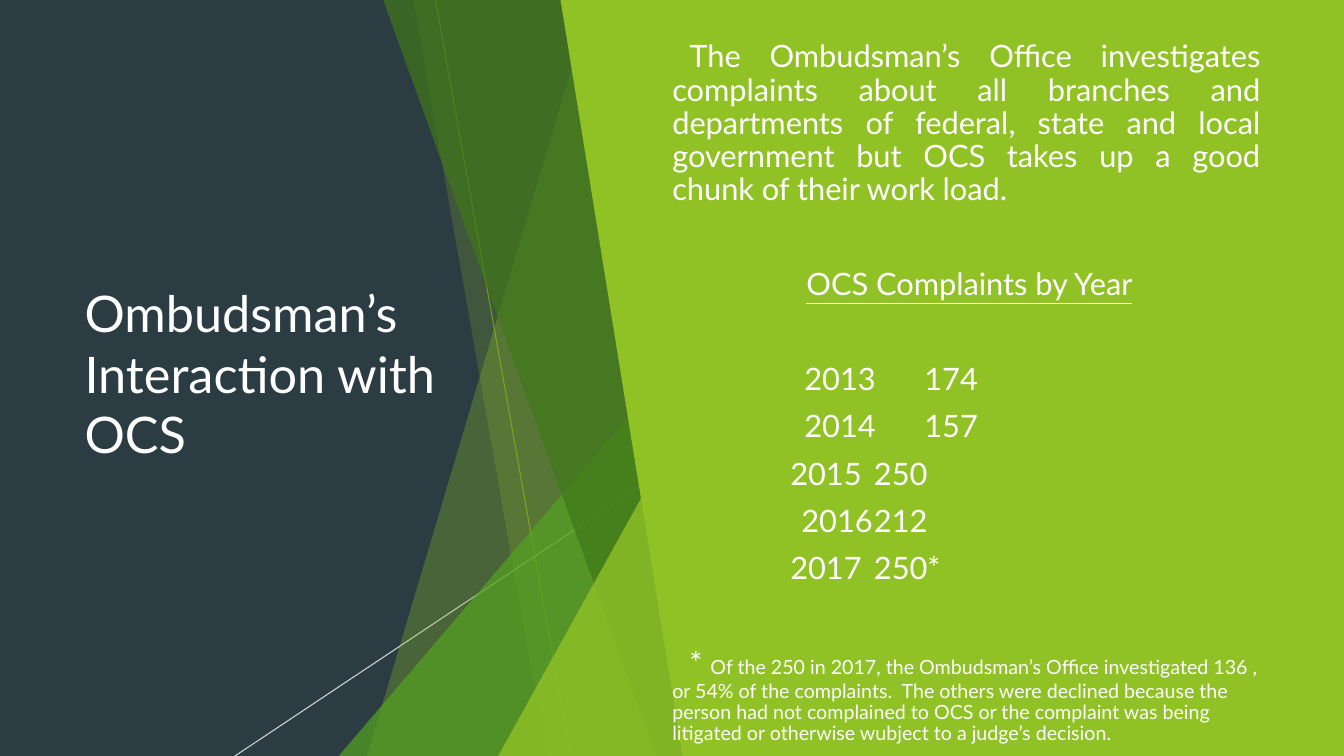
from lxml import etree
from pptx import Presentation, util as u
from pptx.dml.color import RGBColor
from pptx.enum import shapes, text
from pptx.oxml.ns import qn

WIDE, HIGH = 13.33, 7.5
DARK, LIME, LEAF, PINE, WHITE = "2C3C43", "90C226", "54A021", "3F7819", "FFFFFF"
YEARS = [
    ("2013", "174", 1.31, 4.49),
    ("2014", "157", 1.31, 4.49),
    ("2015", "250", 1.17, 4),
    ("2016", "212", 1.28, 4),
    ("2017", "250*", 1.17, 4),
]
ABOUT = (
    "The Ombudsman’s Office investigates complaints about all branches and "
    "departments of federal, state and local government but OCS takes up a good "
    "chunk of their work load."
)
NOTE = (
    "Of the 250 in 2017, the Ombudsman’s Office investigated 136 , or 54% of the "
    "complaints.  The others were declined because the person had not complained "
    "to OCS or the complaint was being litigated or otherwise wubject to a judge’s "
    "decision."
)


def paint(fill, tint, alpha=100):
    """Set a solid colour, with an opacity in percent."""
    fill.solid()
    fill.fore_color.rgb = RGBColor.from_string(tint)
    if alpha < 100:
        for tone in fill._xPr.iter(qn("a:srgbClr")):
            etree.SubElement(tone, qn("a:alpha"), val=str(alpha * 1000))


def finish(shape, tint, alpha=100):
    """Give a shape its fill, without outline or shadow."""
    paint(shape.fill, tint, alpha)
    shape.line.fill.background()
    shape.shadow.inherit = False


def facet(slide, box, points, tint, alpha=100):
    """Draw a polygon from points measured from the box corner."""
    left, top = box[:2]
    spots = [(u.Inches(left + x), u.Inches(top + y)) for x, y in points]
    form = slide.shapes.build_freeform(*spots[0])
    form.add_line_segments(spots[1:], close=True)
    finish(form.convert_to_shape(), tint, alpha)


def wedge(slide, box, x, y, tint, alpha):
    """Draw a triangle that fills the lower right of the box from x, y."""
    left, top, wide, high = box
    place = [u.Inches(n) for n in (left + x, top + y, wide - x, high - y)]
    shape = slide.shapes.add_shape(shapes.MSO_SHAPE.ISOSCELES_TRIANGLE, *place)
    shape.adjustments[0] = 1
    finish(shape, tint, alpha)


def ray(slide, box, start, end, tint, alpha=100):
    """Draw a thin line between two points measured from the box corner."""
    left, top = box[:2]
    ends = [u.Inches(n) for x, y in (start, end) for n in (left + x, top + y)]
    line = slide.shapes.add_connector(shapes.MSO_CONNECTOR.STRAIGHT, *ends)
    line.line.width = u.Pt(0.75)
    paint(line.line.fill, tint, alpha)
    etree.SubElement(line._element.spPr, qn("a:effectLst"))


def frame(slide, box):
    """Add a wrapped, vertically centred text box and return its text frame."""
    area = slide.shapes.add_textbox(*[u.Inches(n) for n in box]).text_frame
    area.word_wrap = True
    area.vertical_anchor = text.MSO_ANCHOR.MIDDLE
    return area


def write(area, *parts, size=22, gap=10, lead=0.9, indent=0, tab=None,
          align=text.PP_ALIGN.LEFT, under=False):
    """Add a paragraph of (words, size) parts or plain strings."""
    para = area.paragraphs[0]
    if para.runs:
        para = area.add_paragraph()
    para.alignment, para.line_spacing = align, lead
    para.space_before = u.Pt(gap)
    props = para._p.get_or_add_pPr()
    props.set("marL", "0")
    props.set("indent", str(u.Inches(indent)))
    if tab:
        stops = etree.SubElement(props, qn("a:tabLst"))
        etree.SubElement(stops, qn("a:tab"), pos=str(u.Inches(tab)), algn="l")
    for part in parts:
        words, points = (part, size) if isinstance(part, str) else part
        run = para.add_run()
        run.text = words
        run.font.name, run.font.size = "Lato", u.Pt(points)
        run.font.underline = under
        run.font.color.rgb = RGBColor.from_string(WHITE)


def facets(slide, box):
    """Layer the slanted facets and the lime panel to their right."""
    wide, high = box[2:]
    edge = WIDE - box[0]
    ray(slide, box, (0.96, 0), (2.3, high), "6C921D")
    ray(slide, box, (4.18, 4.03), (-1.03, high), WHITE, 80)
    for top, foot, tint, alpha in [(2.51, 0.28, LIME, 30), (0.74, 2.06, LIME, 20)]:
        facet(slide, box, [(top, 0), (wide, 0), (wide, high), (foot, high)], tint, alpha)
    wedge(slide, box, 0, 3.33, LEAF, 72)
    facet(slide, box, [(0.44, 0), (wide, 0), (wide, high), (3.15, high)], PINE, 70)
    wedge(slide, box, 1.58, 3.93, LIME, 80)
    facet(slide, box, [(2.2, 0), (edge, 0), (edge, high), (3.41, high)], LIME)


def heading(slide, box):
    """Write the slide title."""
    write(frame(slide, box), "Ombudsman’s Interaction with OCS", size=36, gap=0, lead=1)


def report(slide, box):
    """Write the introduction, the complaints by year and the footnote."""
    area = frame(slide, box)
    wide_gap = 44
    write(area, ABOUT, indent=0.17, align=text.PP_ALIGN.JUSTIFY)
    write(area, "OCS Complaints by Year", gap=wide_gap, indent=1.33, under=True)
    for row, (year, count, indent, tab) in enumerate(YEARS):
        write(area, f"{year}\t{count}", gap=10 if row else wide_gap,
              indent=indent, tab=tab)
    write(area, "* ", (NOTE, 14), gap=wide_gap, indent=0.17)


def main():
    """Build and save the slide."""
    deck = Presentation()
    deck.slide_width, deck.slide_height = u.Inches(WIDE), u.Inches(HIGH)
    slide = deck.slides.add_slide(deck.slide_layouts[6])
    paint(slide.background.fill, DARK)
    facets(slide, (3.36, 0, 3.56, HIGH))
    heading(slide, (0.74, 0.67, 4.2, 6.06))
    report(slide, (6.57, 0.3, 6.03, 7.2))
    deck.save("out.pptx")


if __name__ == "__main__":
    main()
